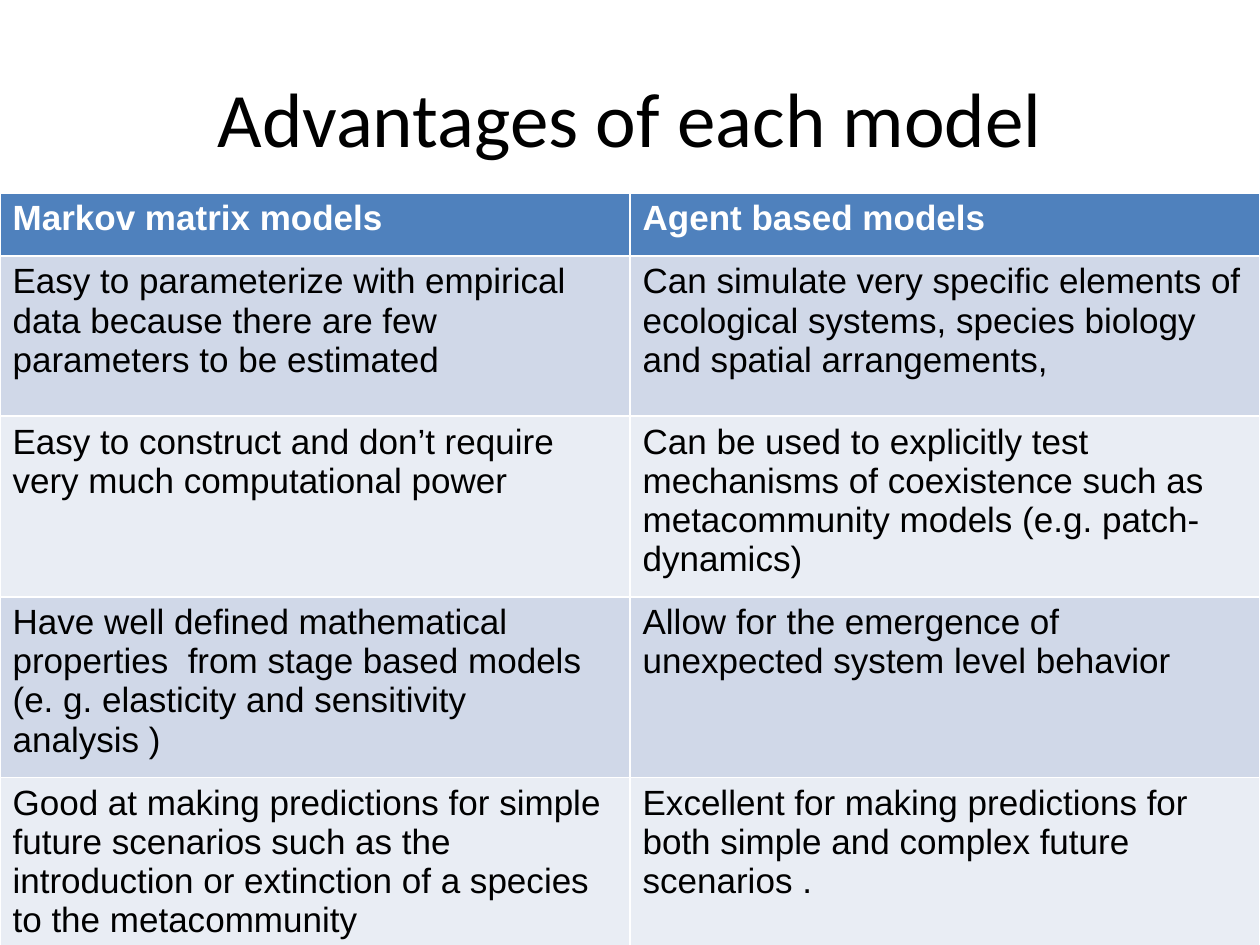
from pptx import Presentation
from pptx.dml.color import RGBColor
from pptx.enum import text
from pptx.util import Cm, Pt

BLACK = RGBColor(0x00, 0x00, 0x00)
WHITE = RGBColor(0xFF, 0xFF, 0xFF)
BLUE = RGBColor(0x4F, 0x81, 0xBD)
BANDS = [RGBColor(0xE9, 0xED, 0xF4), RGBColor(0xD0, 0xD8, 0xE8)]

ROWS = [
    (1.27, "Markov matrix models", "Agent based models"),
    (3.23, "Easy to parameterize with empirical data because there are few parameters to be estimated",
     "Can simulate very specific elements of ecological systems, species biology and spatial arrangements,"),
    (3.23, "Easy to construct and don’t require very much computational power",
     "Can be used to explicitly test mechanisms of coexistence such as metacommunity models (e.g. patch-dynamics)"),
    (3.23, "Have well defined mathematical properties  from stage based models (e. g. elasticity and sensitivity analysis )",
     "Allow for the emergence of unexpected system level behavior"),
    (4.22, "Good at making predictions for simple future scenarios such as the introduction or extinction of a species to the metacommunity",
     "Excellent for making predictions for both simple and complex future scenarios ."),
]


def add_run(para, words, face, size, color, bold=False):
    run = para.add_run()
    run.text = words
    run.font.name = face
    run.font.size = Pt(size)
    run.font.color.rgb = color
    run.font.bold = bold


deck = Presentation()
deck.slide_width = Cm(25.4)
deck.slide_height = Cm(19.05)
slide = deck.slides.add_slide(deck.slide_layouts[6])

title = slide.shapes.add_textbox(Cm(1.27), Cm(0.76), Cm(22.86), Cm(3.18)).text_frame
title.word_wrap = True
title.vertical_anchor = text.MSO_ANCHOR.MIDDLE
title.paragraphs[0].alignment = text.PP_ALIGN.CENTER
add_run(title.paragraphs[0], "Advantages of each model", "Calibri", 44, BLACK)

height = sum(row[0] for row in ROWS)
table = slide.shapes.add_table(len(ROWS), 2, Cm(0), Cm(3.89), Cm(25.4), Cm(height)).table
for r, (tall, *cells) in enumerate(ROWS):
    table.rows[r].height = Cm(tall)
    head = r == 0
    for c, words in enumerate(cells):
        cell = table.cell(r, c)
        cell.fill.solid()
        cell.fill.fore_color.rgb = BLUE if head else BANDS[r % 2]
        add_run(cell.text_frame.paragraphs[0], words, "Arial", 20, WHITE if head else BLACK, head)

deck.save("out.pptx")
